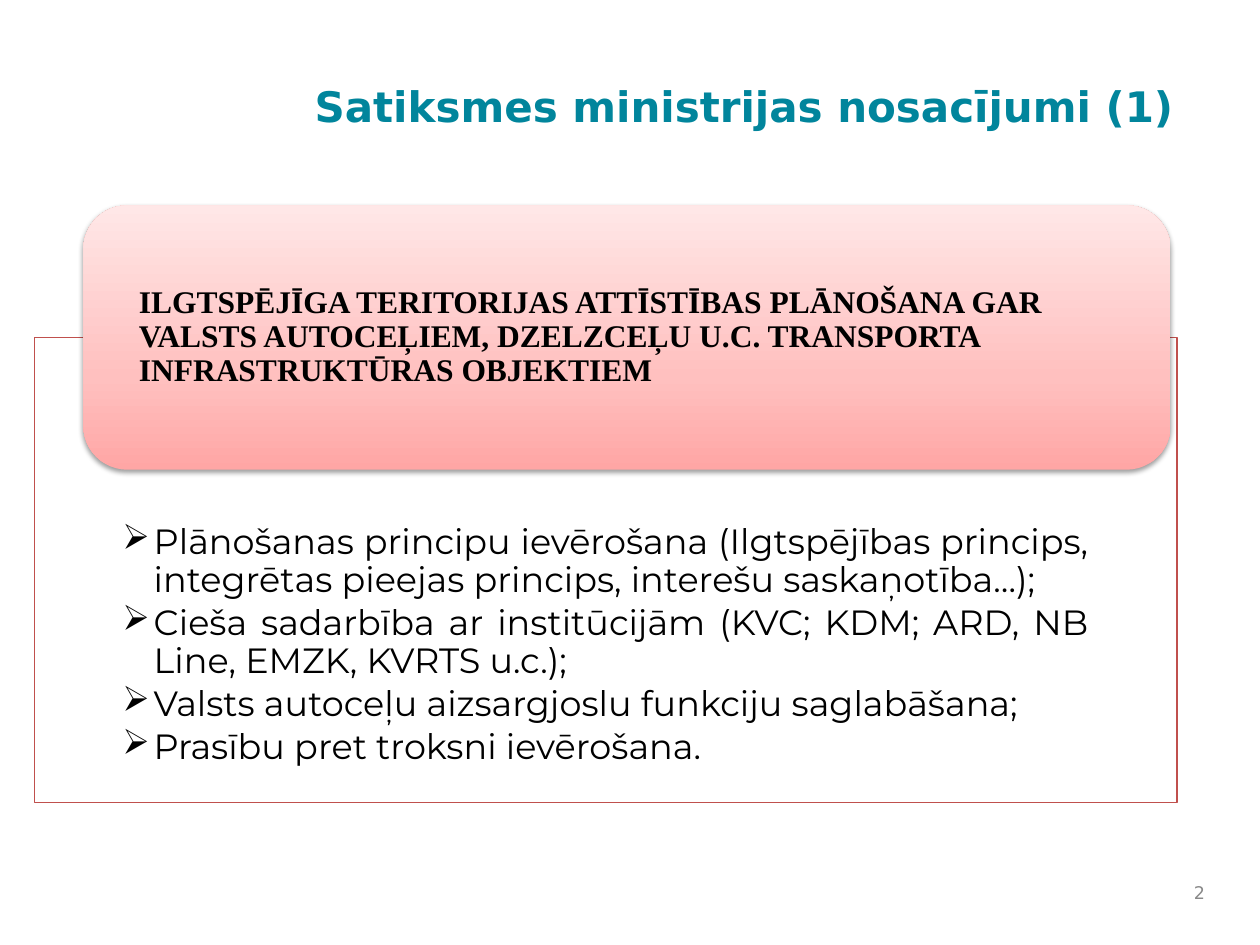
from copy import deepcopy

from lxml.etree import SubElement
from pptx import Presentation
from pptx.dml.color import RGBColor
from pptx.enum.shapes import MSO_SHAPE as Shape
from pptx.enum.text import MSO_ANCHOR as Anchor, PP_ALIGN as Align
from pptx.oxml.ns import qn
from pptx.util import Cm, Pt

TEAL = RGBColor(0x01, 0x85, 0x9C)
GREY = RGBColor(0x89, 0x89, 0x89)
BLACK = RGBColor(0, 0, 0)
WHITE = RGBColor(0xFF, 0xFF, 0xFF)
RED = RGBColor(0xC0, 0x50, 0x4D)
PINKS = [
    (0, RGBColor(0xFF, 0xA6, 0xA5)),
    (0.35, RGBColor(0xFF, 0xC0, 0xBF)),
    (1, RGBColor(0xFF, 0xE7, 0xE7)),
]

TITLE = "Satiksmes ministrijas nosacījumi (1)"
THEME = (
    "ILGTSPĒJĪGA TERITORIJAS ATTĪSTĪBAS PLĀNOŠANA GAR VALSTS AUTOCEĻIEM, "
    "DZELZCEĻU U.C. TRANSPORTA INFRASTRUKTŪRAS OBJEKTIEM"
)
CONDITIONS = [
    "Plānošanas principu ievērošana (Ilgtspējības princips, integrētas pieejas "
    "princips, interešu saskaņotība…);",
    "Cieša sadarbība ar institūcijām (KVC; KDM; ARD, NB Line, EMZK, KVRTS u.c.);",
    "Valsts autoceļu aizsargjoslu funkciju saglabāšana;",
    "Prasību pret troksni ievērošana.",
]


def set_frame(frame, anchor, left, top, right, bottom):
    frame.word_wrap = True
    frame.vertical_anchor = anchor
    frame.margin_left, frame.margin_top = Cm(left), Cm(top)
    frame.margin_right, frame.margin_bottom = Cm(right), Cm(bottom)


def add_run(paragraph, text, font, size, color, bold=False):
    run = paragraph.add_run()
    run.text = text
    run.font.name = font
    run.font.size = Pt(size)
    run.font.color.rgb = color
    run.font.bold = bold


def add_label(slide, box, text, align, anchor, size, color, bold=False):
    frame = slide.shapes.add_textbox(*map(Cm, box)).text_frame
    set_frame(frame, anchor, 0.25, 0.13, 0.25, 0.13)
    paragraph = frame.paragraphs[0]
    paragraph.alignment = align
    add_run(paragraph, text, "DejaVu Sans", size, color, bold)


def add_bullet(paragraph, indent):
    properties = paragraph._p.get_or_add_pPr()
    properties.set("marL", str(Cm(indent)))
    properties.set("indent", str(-Cm(indent)))
    SubElement(properties, qn("a:buChar"), char="➢")


def add_conditions(slide, box):
    panel = slide.shapes.add_shape(Shape.RECTANGLE, *map(Cm, box))
    panel.shadow.inherit = False
    panel.fill.solid()
    panel.fill.fore_color.rgb = WHITE
    tint = panel._element.spPr.find(".//" + qn("a:srgbClr"))
    SubElement(tint, qn("a:alpha"), val="90000")
    panel.line.color.rgb = RED
    panel.line.width = Pt(0.75)

    frame = panel.text_frame
    set_frame(frame, Anchor.TOP, 1.78, 3.76, 1.78, 0.4)
    for index, condition in enumerate(CONDITIONS):
        paragraph = frame.add_paragraph() if index else frame.paragraphs[0]
        add_bullet(paragraph, 0.63)
        paragraph.alignment = Align.JUSTIFY
        paragraph.line_spacing = 0.9
        paragraph.space_after = Pt(3)
        add_run(paragraph, condition, "Montserrat", 20, BLACK)


def add_theme(slide, box):
    banner = slide.shapes.add_shape(Shape.ROUNDED_RECTANGLE, *map(Cm, box))
    banner.line.fill.background()
    banner.fill.gradient()
    banner.fill.gradient_angle = 90
    properties = banner._element.spPr
    stops = properties.find(".//" + qn("a:gsLst"))
    stops.append(deepcopy(stops[0]))
    for stop, (position, color) in zip(banner.fill.gradient_stops, PINKS):
        stop.position = position
        stop.color.rgb = color

    banner.shadow.inherit = False
    shadow = SubElement(
        properties.find(qn("a:effectLst")), qn("a:outerShdw"),
        blurRad=str(Pt(3.1)), dist=str(Pt(1.6)), dir="5400000", rotWithShape="0",
    )
    shade = SubElement(shadow, qn("a:srgbClr"), val=str(BLACK))
    SubElement(shade, qn("a:alpha"), val="38000")

    frame = banner.text_frame
    set_frame(frame, Anchor.MIDDLE, 0.86, 0.25, 0.86, 0.25)
    paragraph = frame.paragraphs[0]
    paragraph.alignment = Align.LEFT
    paragraph.line_spacing = 0.9
    add_run(paragraph, THEME, "Times New Roman", 18, BLACK, True)


def main():
    deck = Presentation()
    deck.slide_width, deck.slide_height = Cm(25.4), Cm(19.05)
    slide = deck.slides.add_slide(deck.slide_layouts[6])
    add_label(slide, (5, 1.5, 20, 2.6), TITLE, Align.CENTER, Anchor.TOP, 24, TEAL, True)
    add_label(slide, (23.7, 17.58, 0.84, 0.84), "2", Align.RIGHT, Anchor.MIDDLE, 10, GREY)
    add_conditions(slide, (0.69, 6.81, 23.04, 9.37))
    add_theme(slide, (1.68, 4.14, 21.92, 5.33))
    deck.save("out.pptx")


if __name__ == "__main__":
    main()
